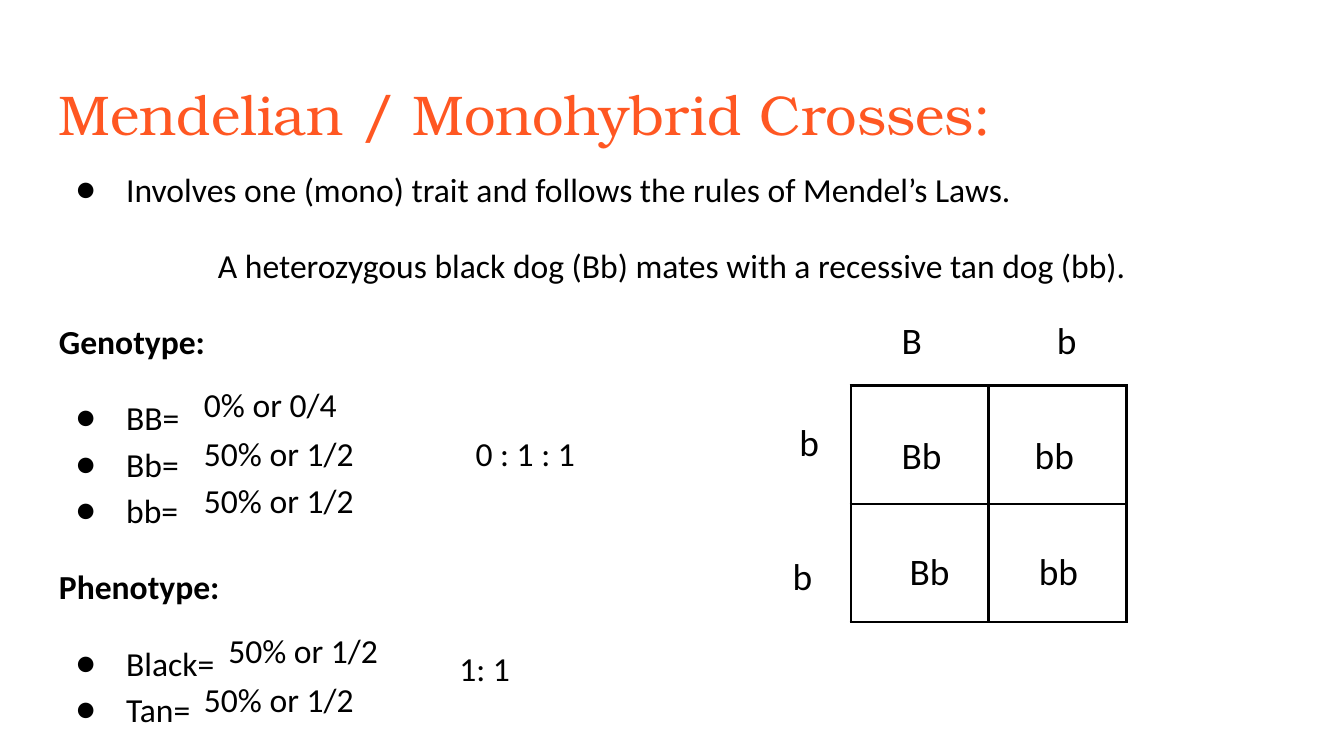
from dataclasses import dataclass

from lxml import etree
from pptx import Presentation
from pptx.dml.color import RGBColor
from pptx.enum.text import PP_ALIGN
from pptx.oxml.ns import qn
from pptx.util import Pt

LEFT = PP_ALIGN.LEFT
CENTER = PP_ALIGN.CENTER


@dataclass(frozen=True)
class Theme:
    ink: str = "000000"
    accent: str = "FF5722"
    title_font: str = "TeX Gyre Bonum"
    body_font: str = "Calibri"
    title_size: float = 30
    body_size: float = 18
    allele_size: float = 20
    inset: float = 7.2
    line_spacing: float = 1.15
    paragraph_gap: float = 16
    indent: float = 36
    hanging: float = 27
    border: float = 1.5


THEME = Theme()


def add_bullet(para):
    properties = para._p.get_or_add_pPr()
    properties.set("marL", str(Pt(THEME.indent)))
    properties.set("indent", str(-Pt(THEME.hanging)))
    color = etree.SubElement(properties, qn("a:buClr"))
    etree.SubElement(color, qn("a:srgbClr"), val=THEME.ink)
    etree.SubElement(properties, qn("a:buFont"), typeface=THEME.body_font)
    etree.SubElement(properties, qn("a:buChar"), char="●")


def write(para, text, size=THEME.body_size, font=THEME.body_font, color=THEME.ink,
          bold=False, align=LEFT, bullet=False, before=0, spacing=None):
    if bullet:
        add_bullet(para)
    para.alignment = align
    para.space_before = Pt(before)
    if spacing:
        para.line_spacing = spacing
    span = para.add_run()
    span.text = text
    span.font.size = Pt(size)
    span.font.name = font
    span.font.bold = bold
    span.font.color.rgb = RGBColor.from_string(color)


def add_box(page, left, top, width, height):
    box = page.shapes.add_textbox(Pt(left), Pt(top), Pt(width), Pt(height))
    frame = box.text_frame
    frame.word_wrap = True
    frame.margin_left = frame.margin_right = Pt(THEME.inset)
    frame.margin_top = frame.margin_bottom = Pt(THEME.inset)
    return frame


def add_label(page, text, left, top, width, height, **style):
    frame = add_box(page, left, top, width, height)
    write(frame.paragraphs[0], text, **style)


def add_title(page, left, top, width, height):
    add_label(page, "Mendelian / Monohybrid Crosses:", left, top, width, height,
              size=THEME.title_size, font=THEME.title_font, color=THEME.accent)


def add_notes(page, left, top, width, height):
    gap = THEME.paragraph_gap
    heading = dict(bold=True, before=gap)
    first_item = dict(bullet=True, before=gap)
    item = dict(bullet=True)
    lines = [
        ("Involves one (mono) trait and follows the rules of Mendel’s Laws.", item),
        ("A heterozygous black dog (Bb) mates with a recessive tan dog (bb).",
         dict(align=CENTER, before=gap)),
        ("Genotype:", heading),
        ("BB=", first_item),
        ("Bb=", item),
        ("bb=", item),
        ("Phenotype:", heading),
        ("Black=", first_item),
        ("Tan=", item),
    ]
    frame = add_box(page, left, top, width, height)
    for index, (text, style) in enumerate(lines):
        para = frame.add_paragraph() if index else frame.paragraphs[0]
        write(para, text, spacing=THEME.line_spacing, **style)


def add_answers(page, left, top, width, height):
    answers = [
        ("0% or 0/4", 77.7, 118.7),
        ("50% or 1/2", 77.7, 144.6),
        ("50% or 1/2", 77.7, 169.8),
        ("50% or 1/2", 90.7, 250.5),
        ("50% or 1/2", 77.7, 276.4),
        ("0 : 1 : 1", 223.2, 144.6),
        ("1: 1", 214.5, 259.8),
    ]
    for text, across, down in answers:
        add_label(page, text, left + across, top + down, width, height)


def add_borders(cell):
    properties = cell._tc.get_or_add_tcPr()
    for side in ("a:lnL", "a:lnR", "a:lnT", "a:lnB"):
        line = etree.SubElement(properties, qn(side), w=str(Pt(THEME.border)))
        fill = etree.SubElement(line, qn("a:solidFill"))
        etree.SubElement(fill, qn("a:srgbClr"), val=THEME.ink)


def add_punnett_square(page, left, top, width, height):
    grid = page.shapes.add_table(2, 2, Pt(left), Pt(top), Pt(width), Pt(height)).table
    grid.first_row = False
    grid.horz_banding = False
    for cell in grid.iter_cells():
        add_borders(cell)
        cell.fill.background()

    alleles = [
        ("B", 20.1, -43.9),
        ("b", 103.3, -43.9),
        ("b", -34.6, 10.8),
        ("b", -38.2, 82.8),
        ("Bb", 20.1, 18),
        ("bb", 91.4, 18),
        ("Bb", 24.4, 80),
        ("bb", 93.6, 80),
    ]
    for text, across, down in alleles:
        add_label(page, text, left + across, top + down, 37.4, 36,
                  size=THEME.allele_size)


def main():
    deck = Presentation()
    deck.slide_width = Pt(720)
    deck.slide_height = Pt(405)
    page = deck.slides.add_slide(deck.slide_layouts[6])
    add_title(page, 24.5, 35.3, 671, 45.4)
    add_notes(page, 24.5, 80, 671, 325)
    add_punnett_square(page, 455.8, 206.6, 147.6, 126.8)
    add_answers(page, 24.5, 80, 113.8, 26)
    deck.save("out.pptx")


if __name__ == "__main__":
    main()
